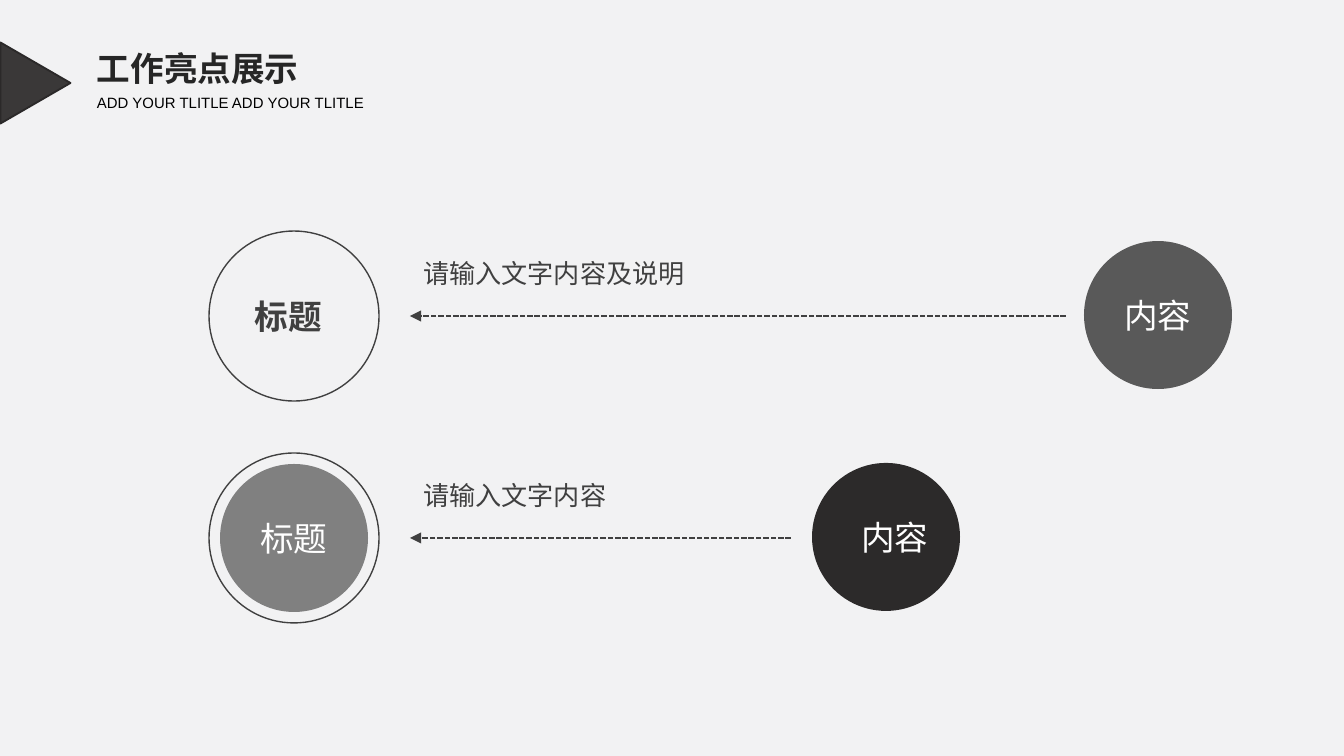
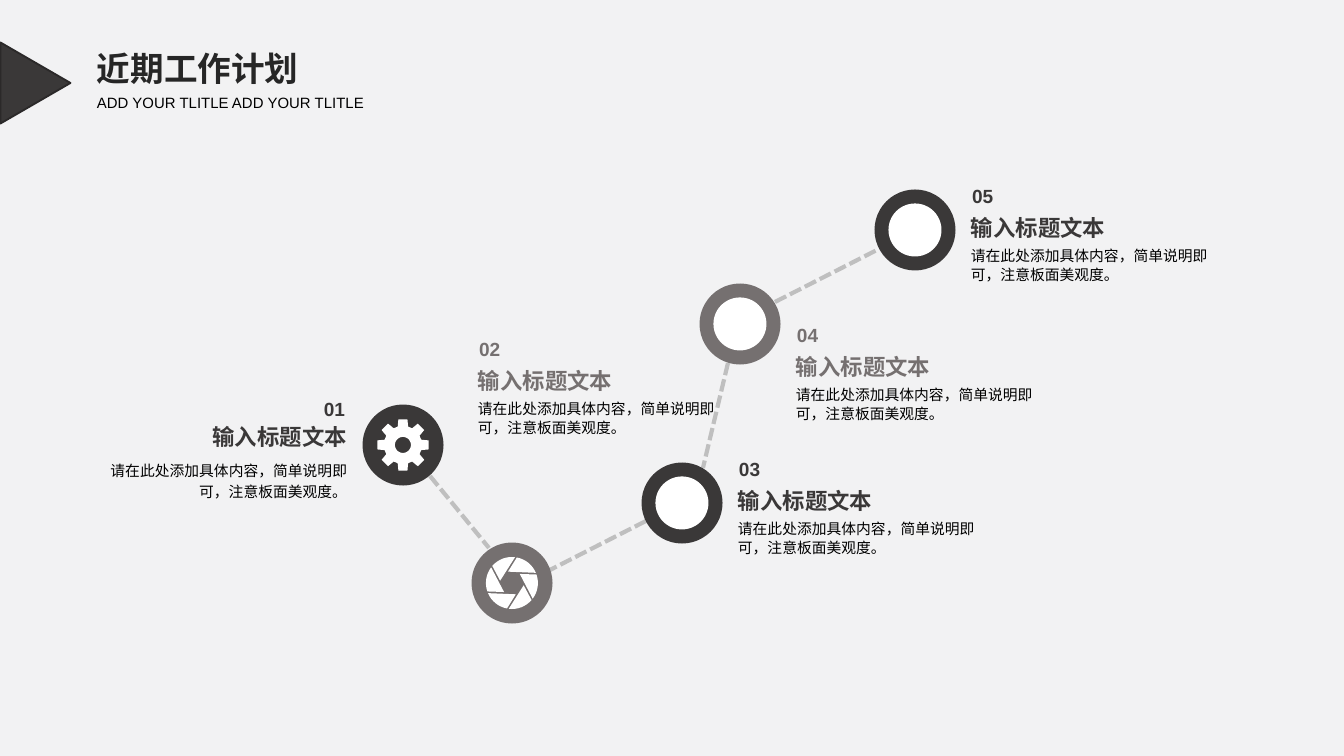
"""Build the work highlights slide and the upcoming work plan slide."""
from math import cos, radians, sin

from lxml.etree import SubElement
from pptx import Presentation
from pptx.dml.color import RGBColor
from pptx.enum.dml import MSO_LINE
from pptx.enum.shapes import MSO_CONNECTOR, MSO_SHAPE
from pptx.enum.text import MSO_ANCHOR, PP_ALIGN
from pptx.oxml.ns import qn
from pptx.util import Emu, Pt

PIXEL = 914400 / 134.4
LATIN_FONT = "Arial"
CHINESE_FONT = "Noto Sans CJK SC"
BACKGROUND, WHITE, BLACK = "F2F2F3", "FFFFFF", "000000"
DARK, GRAY, LINK, INK = "3A3838", "757070", "BFBFBF", "404040"

SUBTITLE = "ADD YOUR TLITLE ADD YOUR TLITLE"
HIGHLIGHTS_TITLE = "工作亮点展示"
PLAN_TITLE = "近期工作计划"

RING_CENTER, RING_SIZE, DISC_SIZE = 294, 170, 148
ARROW_LEFT = 410
HIGHLIGHTS = [
    {"y": 316, "label": "标题", "label_fill": None, "label_color": INK, "label_shift": -6,
     "text": "请输入文字内容及说明", "arrow_right": 1066,
     "content": "内容", "content_x": 1158, "content_fill": "595959", "content_shift": 0},
    {"y": 538, "label": "标题", "label_fill": "808080", "label_color": WHITE, "label_shift": 0,
     "text": "请输入文字内容", "arrow_right": 791,
     "content": "内容", "content_x": 886, "content_fill": "2C2A2A", "content_shift": 9},
]

STEP_TITLE = "输入标题文本"
STEP_BODY = "请在此处添加具体内容，简单说明即可，注意板面美观度。"
NODE_SIZE, ICON_SIZE, STEP_WIDTH = 81, 53, 265
STEPS = [
    {"center": (403, 445), "text_at": (98, 423), "color": DARK, "icon": "gear"},
    {"center": (512, 583), "text_at": (462, 363), "color": GRAY, "icon": "aperture"},
    {"center": (682, 503), "text_at": (722, 483), "color": DARK, "icon": "disc"},
    {"center": (740, 324), "text_at": (780, 349), "color": GRAY, "icon": "disc"},
    {"center": (915, 230), "text_at": (955, 210), "color": DARK, "icon": "disc"},
]
LINKS = [
    ((430, 476), (489, 548)),
    ((646, 521), (550, 570)),
    ((728, 363), (703, 468)),
    ((775, 302), (879, 249)),
]


def px(value):
    return Emu(round(value * PIXEL))


def rgb(value):
    return RGBColor.from_string(value)


def paint(shape, fill=None, line=None, line_width=0.75):
    shape.shadow.inherit = False
    if fill:
        shape.fill.solid()
        shape.fill.fore_color.rgb = rgb(fill)
    else:
        shape.fill.background()
    if line:
        shape.line.color.rgb = rgb(line)
        shape.line.width = Pt(line_width)
    else:
        shape.line.fill.background()


def write(shape, text, size, color, bold=False, font=LATIN_FONT, align=PP_ALIGN.LEFT,
          anchor=MSO_ANCHOR.TOP, margins=(0, 0, 0, 0), spacing=None):
    frame = shape.text_frame
    frame.text = text
    frame.word_wrap = True
    frame.vertical_anchor = anchor
    (frame.margin_left, frame.margin_top,
     frame.margin_right, frame.margin_bottom) = map(px, margins)
    paragraph = frame.paragraphs[0]
    paragraph.alignment = align
    if spacing:
        paragraph.line_spacing = spacing
    run = paragraph.runs[0]
    run.font.name = font
    run.font.size = Pt(size)
    run.font.bold = bold
    run.font.color.rgb = rgb(color)
    SubElement(run.font._element, qn("a:ea"), typeface=CHINESE_FONT)


def add_text(slide, left, top, width, height, *text, **style):
    box = slide.shapes.add_textbox(px(left), px(top), px(width), px(height))
    write(box, *text, **style)


def add_circle(slide, center, size, fill=None, line=None):
    x, y = center
    circle = slide.shapes.add_shape(
        MSO_SHAPE.OVAL, px(x - size / 2), px(y - size / 2), px(size), px(size))
    paint(circle, fill, line)
    return circle


def label_circle(circle, text, color, shift=0, bold=False):
    margins = (max(2 * shift, 0), 0, max(-2 * shift, 0), 0)
    write(circle, text, 18, color, bold=bold, font=CHINESE_FONT,
          align=PP_ALIGN.CENTER, anchor=MSO_ANCHOR.MIDDLE, margins=margins)


def add_dashed_line(slide, start, end, color, width, arrow=False):
    connector = slide.shapes.add_connector(
        MSO_CONNECTOR.STRAIGHT, *map(px, start + end))
    connector.line.color.rgb = rgb(color)
    connector.line.width = Pt(width)
    connector.line.dash_style = MSO_LINE.SQUARE_DOT
    if arrow:
        SubElement(connector.line._get_or_add_ln(), qn("a:tailEnd"), type="triangle")
    SubElement(connector._element.spPr, qn("a:effectLst"))


def add_outline(slide, center, contours, fill):
    def place(point):
        radius, angle = point
        return (px(center[0] + radius * cos(radians(angle))),
                px(center[1] + radius * sin(radians(angle))))

    builder = None
    for contour in contours:
        first, *rest = map(place, contour)
        if builder is None:
            builder = slide.shapes.build_freeform(*first, scale=1.0)
        else:
            builder.move_to(*first)
        builder.add_line_segments(rest, close=True)
    paint(builder.convert_to_shape(), fill)


def gear_contours():
    tooth = [(19, -16), (26, -10), (26, 10), (19, 16)]
    rim = [(radius, angle + turn) for turn in range(0, 360, 45) for radius, angle in tooth]
    hole = [(8, -angle) for angle in range(0, 360, 10)]
    return [rim, hole]


def aperture_contours():
    blade = [(26, angle) for angle in range(-83, -140, -7)] + [(12, -169)]
    return [[(radius, angle + turn) for radius, angle in blade]
            for turn in range(0, 360, 60)]


def add_icon(slide, center, icon):
    if icon == "disc":
        add_circle(slide, center, ICON_SIZE, WHITE)
    else:
        contours = gear_contours() if icon == "gear" else aperture_contours()
        add_outline(slide, center, contours, WHITE)


def add_titled_slide(presentation, title):
    slide = presentation.slides.add_slide(presentation.slide_layouts[6])
    slide.background.fill.solid()
    slide.background.fill.fore_color.rgb = rgb(BACKGROUND)
    add_text(slide, 87, 37, 392, 67, title, 18, "262626", bold=True, spacing=0.9,
             anchor=MSO_ANCHOR.MIDDLE, margins=(10, 5, 10, 5))
    add_text(slide, 87, 89, 312, 28, SUBTITLE, 8, BLACK, margins=(10, 5, 10, 5))
    marker = slide.shapes.add_shape(
        MSO_SHAPE.ISOSCELES_TRIANGLE, px(-5), px(48), px(81), px(70))
    marker.rotation = 90
    paint(marker, DARK, "2B2929", 1)
    return slide


def build_highlights(presentation):
    slide = add_titled_slide(presentation, HIGHLIGHTS_TITLE)
    for row in HIGHLIGHTS:
        y = row["y"]
        label = add_circle(slide, (RING_CENTER, y), RING_SIZE, line=INK)
        if row["label_fill"]:
            label = add_circle(slide, (RING_CENTER, y), DISC_SIZE, row["label_fill"])
        label_circle(label, row["label"], row["label_color"], row["label_shift"],
                     bold=not row["label_fill"])
        content = add_circle(slide, (row["content_x"], y - 1), DISC_SIZE, row["content_fill"])
        label_circle(content, row["content"], WHITE, row["content_shift"])
        add_dashed_line(slide, (row["arrow_right"], y), (ARROW_LEFT, y), INK, 1, arrow=True)
        add_text(slide, ARROW_LEFT, y - 74, 424, 63, row["text"], 14, INK,
                 font=CHINESE_FONT, anchor=MSO_ANCHOR.MIDDLE, margins=(13, 7, 13, 7))


def build_plan(presentation):
    slide = add_titled_slide(presentation, PLAN_TITLE)
    for start, end in LINKS:
        add_dashed_line(slide, start, end, LINK, 2.25)
    for number, step in enumerate(STEPS, 1):
        left, top = step["text_at"]
        color = step["color"]
        on_left = left < step["center"][0] - STEP_WIDTH
        align = PP_ALIGN.RIGHT if on_left else PP_ALIGN.LEFT
        anchor = MSO_ANCHOR.TOP if on_left else MSO_ANCHOR.MIDDLE
        margins = (0, 0, 16, 0) if on_left else (16, 0, 0, 0)
        number_left = left + STEP_WIDTH - 46 if on_left else left + 17
        add_circle(slide, step["center"], NODE_SIZE, color)
        add_icon(slide, step["center"], step["icon"])
        add_text(slide, number_left, top - 25, 28, 24, f"{number:02}", 10.2, color,
                 bold=True, align=align)
        add_text(slide, left, top, STEP_WIDTH, 35, STEP_TITLE, 12, color, bold=True,
                 align=align, anchor=anchor, margins=margins)
        add_text(slide, left, top + 35, STEP_WIDTH, 60, STEP_BODY, 7.9, BLACK,
                 align=align, margins=margins, spacing=1.2 if on_left else 1.1)


def main():
    presentation = Presentation()
    presentation.slide_width = px(1344)
    presentation.slide_height = px(756)
    build_highlights(presentation)
    build_plan(presentation)
    presentation.save("out.pptx")


if __name__ == "__main__":
    main()
